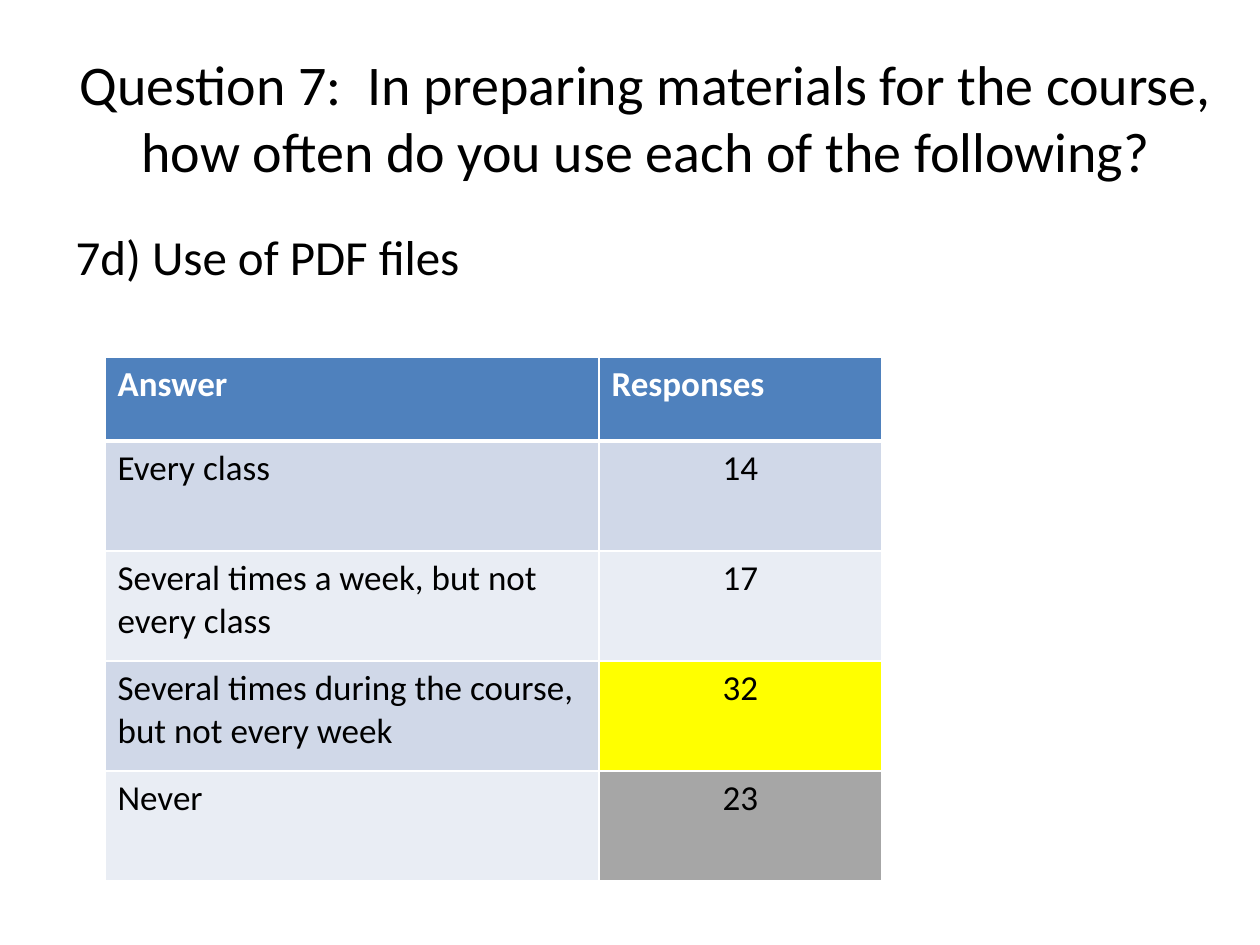
from lxml.etree import SubElement
from pptx import Presentation
from pptx.dml.color import RGBColor
from pptx.enum.text import MSO_ANCHOR, MSO_AUTO_SIZE, PP_ALIGN
from pptx.oxml.ns import qn
from pptx.util import Pt

PX_PER_INCH = 126
FONT = "Calibri"
BLACK, WHITE = "000000", "FFFFFF"
HEADER_FILL = "4F81BD"
BAND_FILLS = ["D0D8E8", "E9EDF4"]
HIGHLIGHTS = {"32": "FFFF00", "23": "A6A6A6"}

HEADERS = ["Answer", "Responses"]
ANSWERS = [
    ("Every class", "14"),
    ("Several times a week, but not every class", "17"),
    ("Several times during the course, but not every week", "32"),
    ("Never", "23"),
]


def px(n):
    return round(n * 914400 / PX_PER_INCH)


def color(value):
    return RGBColor.from_string(value)


def add_run(p, text, size, ink=BLACK, bold=False):
    r = p.add_run()
    r.text = text
    r.font.name, r.font.size, r.font.bold = FONT, Pt(size), bold
    r.font.color.rgb = color(ink)


def fill_placeholder(sp, box, text, size, align, anchor):
    sp.left, sp.top, sp.width, sp.height = map(px, box)
    tf = sp.text_frame
    tf.word_wrap = True
    tf.auto_size = MSO_AUTO_SIZE.NONE
    tf.vertical_anchor = anchor
    p = tf.paragraphs[0]
    p.alignment = align
    add_run(p, text, size)
    return p


def remove_bullet(p, indent):
    pPr = p._p.get_or_add_pPr()
    pPr.set("marL", str(px(indent)))
    pPr.set("indent", str(-px(indent)))
    SubElement(pPr, qn("a:buNone"))


def set_borders(cell, bottom, top):
    tcPr = cell._tc.get_or_add_tcPr()
    for side, width in (("L", 1), ("R", 1), ("T", top), ("B", bottom)):
        ln = SubElement(tcPr, qn(f"a:ln{side}"), w=str(Pt(width)))
        SubElement(SubElement(ln, qn("a:solidFill")), qn("a:srgbClr"), val=WHITE)


def fill_cell(cell, text, fill, ink=BLACK, bold=False, align=PP_ALIGN.LEFT,
              top=1, bottom=1):
    set_borders(cell, bottom, top)
    cell.fill.solid()
    cell.fill.fore_color.rgb = color(fill)
    p = cell.text_frame.paragraphs[0]
    p.alignment = align
    add_run(p, text, 20, ink, bold)


def add_answer_table(s, left, top, col_widths, header_height, row_height):
    heights = [header_height] + [row_height] * len(ANSWERS)
    table = s.shapes.add_table(len(heights), len(col_widths), px(left), px(top),
                               px(sum(col_widths)), px(sum(heights))).table
    for col, width in zip(table.columns, col_widths):
        col.width = px(width)
    for row, height in zip(table.rows, heights):
        row.height = px(height)

    # Header row with a thick rule below
    for c, text in enumerate(HEADERS):
        fill_cell(table.cell(0, c), text, HEADER_FILL, WHITE, True, bottom=3)

    # Banded answers, with some counts highlighted
    for i, (answer, count) in enumerate(ANSWERS):
        band = BAND_FILLS[i % 2]
        top_rule = 3 if i == 0 else 1
        fill_cell(table.cell(i + 1, 0), answer, band, top=top_rule)
        fill_cell(table.cell(i + 1, 1), count, HIGHLIGHTS.get(count, band),
                  align=PP_ALIGN.CENTER, top=top_rule)


def main():
    prs = Presentation()
    prs.slide_width, prs.slide_height = px(1260), px(945)
    s = prs.slides.add_slide(prs.slide_layouts[1])

    # Question and sub-question
    fill_placeholder(
        s.shapes.title, (63, 38, 1166, 157),
        "Question 7:  In preparing materials for the course, "
        "how often do you use each of the following?",
        32, PP_ALIGN.CENTER, MSO_ANCHOR.MIDDLE)
    p = fill_placeholder(s.placeholders[1], (63, 220, 1134, 546),
                         "7d) Use of PDF files", 28, PP_ALIGN.LEFT, MSO_ANCHOR.TOP)
    remove_bullet(p, 47)

    # Responses
    add_answer_table(s, 105, 357, (494, 283), 84, 110)

    prs.save("out.pptx")


if __name__ == "__main__":
    main()
